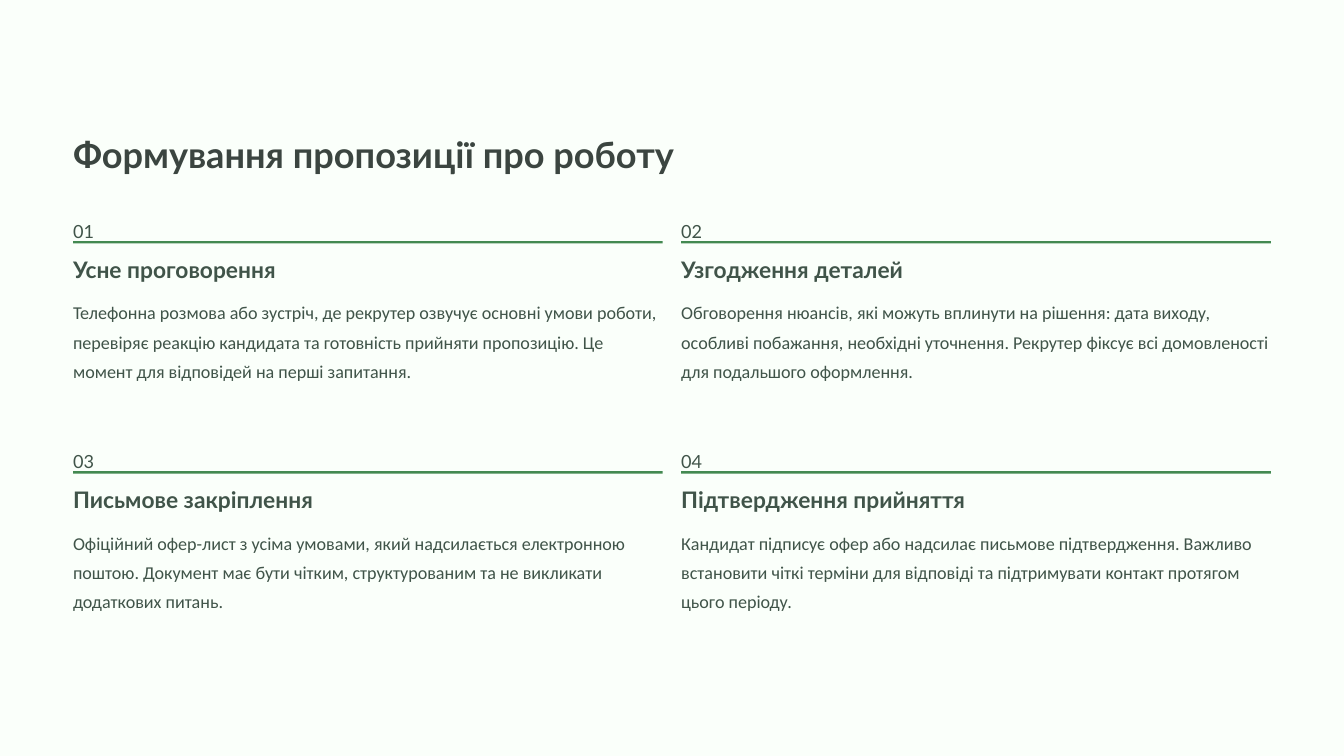
from dataclasses import dataclass

from pptx import Presentation
from pptx.dml.color import RGBColor
from pptx.enum import shapes
from pptx.util import Cm, Pt


@dataclass(frozen=True)
class Theme:
    background: str = "FAFFFA"
    title: str = "3B4540"
    text: str = "405449"
    rule: str = "438951"
    heading_font: str = "Lato"
    body_font: str = "Calibri"
    title_size: float = 31
    heading_size: float = 19.5
    body_size: float = 15.5


THEME = Theme()
SLIDE_WIDTH, SLIDE_HEIGHT = 40.64, 22.86
LEFT, TOP = 2.21, 6.43
COLUMN_STEP, ROW_STEP = 18.39, 6.96
COLUMN_WIDTH = 17.83

STEPS = [
    ("Усне проговорення", 6.91, 3.53,
     "Телефонна розмова або зустріч, де рекрутер озвучує основні умови роботи, "
     "перевіряє реакцію кандидата та готовність прийняти пропозицію. "
     "Це момент для відповідей на перші запитання."),
    ("Узгодження деталей", 7.54, 2.64,
     "Обговорення нюансів, які можуть вплинути на рішення: дата виходу, "
     "особливі побажання, необхідні уточнення. "
     "Рекрутер фіксує всі домовленості для подальшого оформлення."),
    ("Письмове закріплення", 8.28, 2.64,
     "Офіційний офер-лист з усіма умовами, який надсилається електронною поштою. "
     "Документ має бути чітким, структурованим та не викликати додаткових питань."),
    ("Підтвердження прийняття", 9.68, 2.64,
     "Кандидат підписує офер або надсилає письмове підтвердження. "
     "Важливо встановити чіткі терміни для відповіді та підтримувати контакт "
     "протягом цього періоду."),
]


def add_text(s, content, x, y, w, h, *, size=THEME.body_size, color=THEME.text,
             font=THEME.heading_font, bold=False, spacing=25, wrap=False):
    tf = s.shapes.add_textbox(Cm(x), Cm(y), Cm(w), Cm(h)).text_frame
    tf.margin_left = tf.margin_right = tf.margin_top = tf.margin_bottom = 0
    tf.word_wrap = wrap
    p = tf.paragraphs[0]
    p.line_spacing = Pt(spacing)
    r = p.add_run()
    r.text = content
    r.font.name = font
    r.font.size = Pt(size)
    r.font.bold = bold
    r.font.color.rgb = RGBColor.from_string(color)


def add_rect(s, x, y, w, h, color):
    sp = s.shapes.add_shape(shapes.MSO_SHAPE.RECTANGLE, Cm(x), Cm(y), Cm(w), Cm(h))
    sp.shadow.inherit = False
    sp.fill.solid()
    sp.fill.fore_color.rgb = RGBColor.from_string(color)
    sp.line.fill.background()


def add_step(s, index, heading, heading_width, body_height, body):
    row, column = divmod(index, 2)
    x = LEFT + column * COLUMN_STEP
    y = TOP + row * ROW_STEP
    add_text(s, f"{index + 1:02}", x, y, 0.7, 0.69)
    add_rect(s, x, y + 0.86, COLUMN_WIDTH, 0.07, THEME.rule)
    add_text(s, heading, x, y + 1.27, heading_width, 0.86,
             size=THEME.heading_size, bold=True, spacing=24)
    add_text(s, body, x, y + 2.47, COLUMN_WIDTH, body_height,
             font=THEME.body_font, wrap=True)


def main():
    prs = Presentation()
    prs.slide_width, prs.slide_height = Cm(SLIDE_WIDTH), Cm(SLIDE_HEIGHT)
    s = prs.slides.add_slide(prs.slide_layouts[6])
    add_rect(s, 0, 0, SLIDE_WIDTH, SLIDE_HEIGHT, THEME.background)
    add_text(s, "Формування пропозиції про роботу", LEFT, 3.94, 20.47, 1.37,
             size=THEME.title_size, color=THEME.title, bold=True, spacing=39)
    for index, step in enumerate(STEPS):
        add_step(s, index, *step)
    prs.save("out.pptx")


if __name__ == "__main__":
    main()
